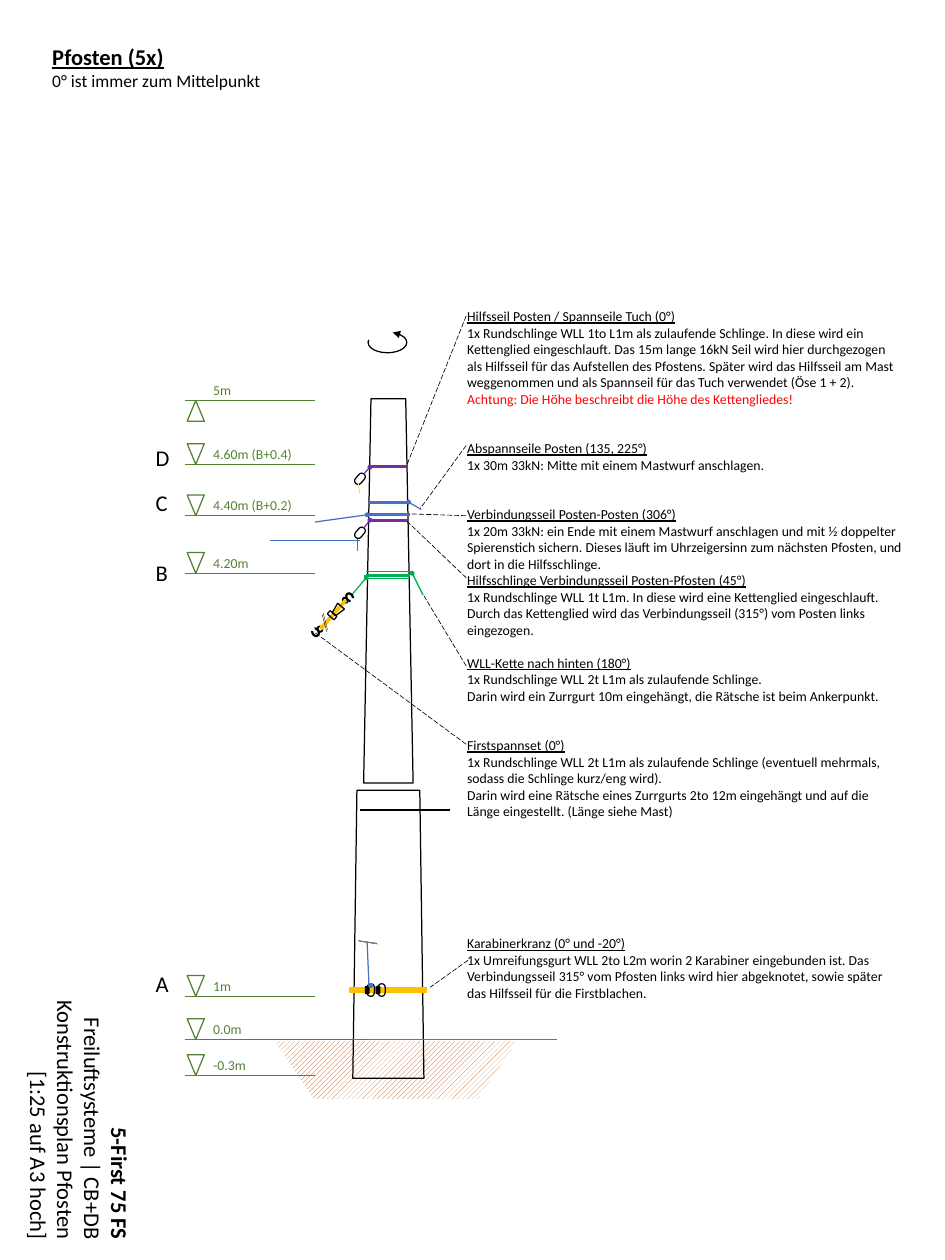
import pptx
import pptx.util
import pptx.dml.color
import pptx.enum.dml
import pptx.enum.shapes
import pptx.enum.text
import pptx.oxml.ns
from lxml import etree

RGB = pptx.dml.color.RGBColor
BLACK = RGB(0x00, 0x00, 0x00)
WHITE = RGB(0xFF, 0xFF, 0xFF)
RED = RGB(0xFF, 0x00, 0x00)
LEVEL_GREEN = RGB(0x54, 0x82, 0x35)
EARTH = RGB(0xC5, 0x5A, 0x11)
BLUE = RGB(0x44, 0x72, 0xC4)
GREEN = RGB(0x00, 0xB0, 0x50)
PURPLE = RGB(0x70, 0x30, 0xA0)
ORANGE = RGB(0xFF, 0xC0, 0x00)
YELLOW = RGB(0xFF, 0xD9, 0x66)

COLS, ROWS = 10.5, 14
CELL = pptx.util.Inches(1)
LINE_PITCH = 13.2
FONT = "Calibri"
MSO = pptx.enum.shapes.MSO_SHAPE
ALIGN = pptx.enum.text.PP_ALIGN
ANCHOR = pptx.enum.text.MSO_ANCHOR
AUTO = pptx.enum.text.MSO_AUTO_SIZE

LEVELS = [(5.16, "4.60m (B+0.4)", 1.09), (5.73, "4.40m (B+0.2)", 1.09),
          (6.37, "4.20m", 0.6), (11.07, "1m", 0.4),
          (11.55, "0.0m", 0.52), (11.95, "-0.3m", 0.57)]
LETTERS = [("A", 10.73), ("B", 6.16), ("C", 5.38), ("D", 4.88)]
SLINGS = [(4.1, 4.54, 5.57, 0.02, (4.54, 5.58), (4.68, 5.66), BLUE),
          (4.08, 4.55, 5.71, 0.02, (4.08, 5.72), (3.5, 5.8), BLUE),
          (4.11, 4.53, 5.17, 0.02, (4.11, 5.19), (4.04, 5.27), PURPLE),
          (4.11, 4.53, 5.77, 0.02, (4.11, 5.78), (4.04, 5.87), PURPLE),
          (4.04, 4.55, 6.4, 0.03, (4.07, 6.42), (3.9, 6.62), GREEN),
          (4.07, 4.59, 6.35, 0.03, (4.58, 6.37), (4.7, 6.61), GREEN)]
LEADERS = [((5.18, 3.51), (4.52, 5.17)), ((5.18, 4.95), (4.67, 5.65)),
           ((5.18, 5.73), (4.55, 5.71)), ((5.18, 6.42), (4.52, 5.79)),
           ((5.18, 7.4), (4.71, 6.62)), ((5.18, 8.27), (3.5, 7.03)),
           ((5.2, 10.67), (4.78, 10.97))]
NOTES = [
    (0, "Hilfsseil Posten / Spannseile Tuch (0°)",
     ["1x Rundschlinge WLL 1to L1m als zulaufende Schlinge. In diese wird ein Kettenglied eingeschlauft. Das 15m lange 16kN Seil wird hier durchgezogen als Hilfsseil für das Aufstellen des Pfostens. Später wird das Hilfsseil am Mast weggenommen und als Spannseil für das Tuch verwendet (Öse 1 + 2).",
      "Achtung: Die Höhe beschreibt die Höhe des Kettengliedes!"]),
    (2, "Abspannseile Posten (135, 225°)",
     ["1x 30m 33kN: Mitte mit einem Mastwurf anschlagen."]),
    (2, "Verbindungsseil Posten-Posten (306°)",
     ["1x 20m 33kN: ein Ende mit einem Mastwurf anschlagen und mit ½ doppelter Spierenstich sichern. Dieses läuft im Uhrzeigersinn zum nächsten Pfosten, und dort in die Hilfsschlinge."]),
    (0, "Hilfsschlinge Verbindungsseil Posten-Pfosten (45°)",
     ["1x Rundschlinge WLL 1t L1m. In diese wird eine Kettenglied eingeschlauft. Durch das Kettenglied wird das Verbindungsseil (315°) vom Posten links eingezogen."]),
    (1, "WLL-Kette nach hinten (180°)",
     ["1x Rundschlinge WLL 2t L1m als zulaufende Schlinge.",
      "Darin wird ein Zurrgurt 10m eingehängt, die Rätsche ist beim Ankerpunkt."]),
    (2, "Firstspannset (0°)",
     ["1x Rundschlinge WLL 2t L1m als zulaufende Schlinge (eventuell mehrmals, sodass die Schlinge kurz/eng wird).",
      "Darin wird eine Rätsche eines Zurrgurts 2to 12m eingehängt und auf die Länge eingestellt. (Länge siehe Mast)"]),
    (7, "Karabinerkranz (0° und -20°)",
     ["1x Umreifungsgurt WLL 2to L2m worin 2 Karabiner eingebunden ist. Das Verbindungsseil 315° vom Pfosten links wird hier abgeknotet, sowie später das Hilfsseil für die Firstblachen."]),
]


def grid(*cells):
    return [round(c * CELL) for c in cells]


def write(tf, text, size=11, color=BLACK, bold=False, underline=False,
          align=ALIGN.LEFT, gap=0):
    p = tf.paragraphs[0] if not tf.text else tf.add_paragraph()
    pPr = p._p.get_or_add_pPr()
    pPr.set("marL", "0")
    pPr.set("indent", "0")
    etree.SubElement(pPr, pptx.oxml.ns.qn("a:buNone"))
    p.alignment = align
    p.space_before = pptx.util.Pt(gap)
    r = p.add_run()
    r.text = text
    f = r.font
    f.name, f.size, f.bold, f.underline = FONT, pptx.util.Pt(size), bold, underline
    f.color.rgb = color


def place(sp, *at):
    sp.left, sp.top, sp.width, sp.height = grid(*at)
    tf = sp.text_frame
    tf.word_wrap = True
    tf.auto_size = AUTO.NONE
    tf.vertical_anchor = ANCHOR.TOP
    return tf


def label(s, at, text, wrap=False, **fmt):
    tf = s.shapes.add_textbox(*grid(*at)).text_frame
    tf.word_wrap = wrap
    tf.auto_size = AUTO.SHAPE_TO_FIT_TEXT
    write(tf, text, **fmt)


def stroke(sp, color, width):
    sp.line.color.rgb = color
    sp.line.width = pptx.util.Pt(width)


def line(s, start, end, color=BLACK, width=1, dashed=False):
    c = s.shapes.add_connector(pptx.enum.shapes.MSO_CONNECTOR.STRAIGHT,
                               *grid(*start, *end))
    stroke(c, color, width)
    if dashed:
        c.line.dash_style = pptx.enum.dml.MSO_LINE.LONG_DASH
    etree.SubElement(c._element.spPr, pptx.oxml.ns.qn("a:effectLst"))


def shape(s, kind, at, color=BLACK, width=1, fill=None, rot=0, adj=()):
    sp = s.shapes.add_shape(kind, *grid(*at))
    sp.shadow.inherit = False
    sp.rotation = rot
    for i, value in enumerate(adj):
        sp.adjustments[i] = value
    if fill is None:
        sp.fill.background()
    else:
        sp.fill.solid()
        sp.fill.fore_color.rgb = fill
    if color is None:
        sp.line.fill.background()
    else:
        stroke(sp, color, width)
    return sp


def arc(s, at, start, end, **fmt):
    return shape(s, MSO.ARC, at, adj=(start * 0.6, end * 0.6), **fmt)


def polyline(s, points, color=BLACK, width=1):
    fb = s.shapes.build_freeform(*points[0], scale=CELL)
    fb.add_line_segments(points[1:], close=False)
    sp = fb.convert_to_shape()
    sp.shadow.inherit = False
    sp.fill.background()
    stroke(sp, color, width)


def knot(s, x, y, color):
    shape(s, MSO.OVAL, (x - 0.02, y - 0.02, 0.04, 0.04), color, fill=color)


def level(s, y, text, width, below=False):
    line(s, (2.05, y), (3.5, y), LEVEL_GREEN)
    shape(s, MSO.ISOSCELES_TRIANGLE, (2.08, y if below else y - 0.23, 0.19, 0.23),
          LEVEL_GREEN, rot=0 if below else 180)
    label(s, (2.27, y - 0.26, width, 0.29), text, color=LEVEL_GREEN)


def sling(s, left, right, y, spread, tie, end, color):
    for dy in (0, spread):
        line(s, (right, y + dy), (left, y + dy), color)
    line(s, tie, end, color)
    knot(s, *tie, color)


def carabiner(s, x, y, rot):
    shape(s, MSO.ROUNDED_RECTANGLE, (x, y, 0.14, 0.08), rot=rot, adj=(0.5,))


def post(s):
    ground = shape(s, MSO.TRAPEZOID, (3.05, 11.57, 2.7, 0.64), None, rot=180, adj=(0.684,))
    ground.fill.patterned()
    ground.fill.pattern = pptx.enum.dml.MSO_PATTERN.WIDE_UPWARD_DIAGONAL
    ground.fill.fore_color.rgb = EARTH
    ground.fill.back_color.rgb = WHITE
    shape(s, MSO.TRAPEZOID, (4.04, 4.43, 0.55, 4.27), adj=(0.149,))
    shape(s, MSO.TRAPEZOID, (3.92, 8.78, 0.79, 3.2), adj=(0.058,))
    crack = [(3.81, 8.77), (4.08, 8.69), (4.29, 8.73), (4.54, 8.7), (4.8, 8.73)]
    for dx, dy in ((0, 0), (0.01, 0.05)):
        polyline(s, [(x + dx, y + dy) for x, y in crack])
    line(s, (2.64, 11.55), (6.19, 11.55), EARTH, 1.25)
    line(s, (2.05, 11.55), (4.06, 11.55), LEVEL_GREEN)
    turn = arc(s, (4.09, 3.69, 0.43, 0.23), 298, 188)
    etree.SubElement(turn.line._get_or_add_ln(), pptx.oxml.ns.qn("a:headEnd"), type="triangle")


def ropes(s):
    for y in (5.28, 5.88):
        carabiner(s, 3.93, y, 310.5)
    polyline(s, [(3.78, 5.46), (3.95, 5.35), (3.98, 5.36), (3.98, 5.37)], YELLOW, 0.75)
    line(s, (3.98, 5.37), (4, 5.49), YELLOW, 0.75)
    polyline(s, [(3.49, 5.96), (3.93, 5.91), (3.96, 5.93), (3.97, 5.97)], BLUE, 0.75)
    line(s, (3.97, 5.99), (3.97, 6.12), BLUE, 0.75)
    for row in SLINGS:
        sling(s, *row)


def ratchet(s):
    for x, y, hook_x, hook_y, turn in ((3.81, 6.64, 3.85, 6.59, 324.2),
                                       (3.53, 6.96, 3.47, 6.98, 145.7)):
        shape(s, MSO.OVAL, (x, y, 0.05, 0.06), width=1.5, rot=turn)
        arc(s, (hook_x, hook_y, 0.07, 0.09), 104.47, 43.9, width=1.75, rot=turn + 6.9)
    line(s, (3.56, 6.99), (3.84, 6.67), ORANGE, 3)
    for d in (0, 0.01):
        line(s, (3.64 - d, 7 + 2 * d), (3.59 - d, 6.81 + 2 * d), width=0.25)
    shape(s, MSO.TRAPEZOID, (3.7, 6.72, 0.1, 0.12), rot=221.4)
    shape(s, MSO.ROUNDED_RECTANGLE, (3.64, 6.81, 0.1, 0.05), rot=221.4)


def carabiner_ring(s):
    shape(s, MSO.RECTANGLE, (3.89, 10.97, 0.85, 0.06), ORANGE, fill=ORANGE)
    for x in (4.05, 4.17):
        carabiner(s, x, 10.96, 270.9)
        shape(s, MSO.ROUNDED_RECTANGLE, (x - 0.01, 10.98, 0.08, 0.04), fill=BLACK, rot=269.7)
    line(s, (4.1, 10.96), (4.08, 10.48), BLUE)
    knot(s, 4.12, 10.95, BLUE)
    for d in (0, 0.01):
        line(s, (3.99 - d, 10.46 - d), (4.2 - d, 10.49 - d), width=0.25)


def plan_stamp(s):
    sp = shape(s, MSO.RECTANGLE, (-0.56, 11.77, 2.89, 1.31), None, fill=WHITE, rot=90)
    tf = sp.text_frame
    tf.word_wrap = False
    write(tf, "5-First 75 FS", size=18, bold=True, align=ALIGN.RIGHT)
    for text in ("Freiluftsysteme | CB+DB", "Konstruktionsplan Pfosten", "[1:25 auf A3 hoch]"):
        write(tf, text, size=18, align=ALIGN.RIGHT)


def main():
    prs = pptx.Presentation()
    prs.slide_width, prs.slide_height = grid(COLS, ROWS)
    s = prs.slides.add_slide(prs.slide_layouts[1])
    tf = place(s.shapes.title, 0.48, 0.43, 2.6, 0.64)
    write(tf, "Pfosten (5x)", size=18, bold=True, underline=True)
    write(tf, "0° ist immer zum Mittelpunkt", size=14)
    tf = place(s.placeholders[1], 5.09, 3.37, 5.06, 8.25)
    for blank_rows, heading, body in NOTES:
        write(tf, heading, underline=True, gap=blank_rows * LINE_PITCH)
        for text in body:
            write(tf, text, color=RED if text.startswith("Achtung") else BLACK)
    post(s)
    level(s, 4.45, "5m", 0.4, below=True)
    for row in LEVELS:
        level(s, *row)
    ropes(s)
    ratchet(s)
    carabiner_ring(s)
    for start, end in LEADERS:
        line(s, start, end, width=0.5, dashed=True)
    plan_stamp(s)
    for letter, y in LETTERS:
        label(s, (1.63, y, 0.36, 0.4), letter, wrap=True, size=18)
    prs.save("out.pptx")


if __name__ == "__main__":
    main()
